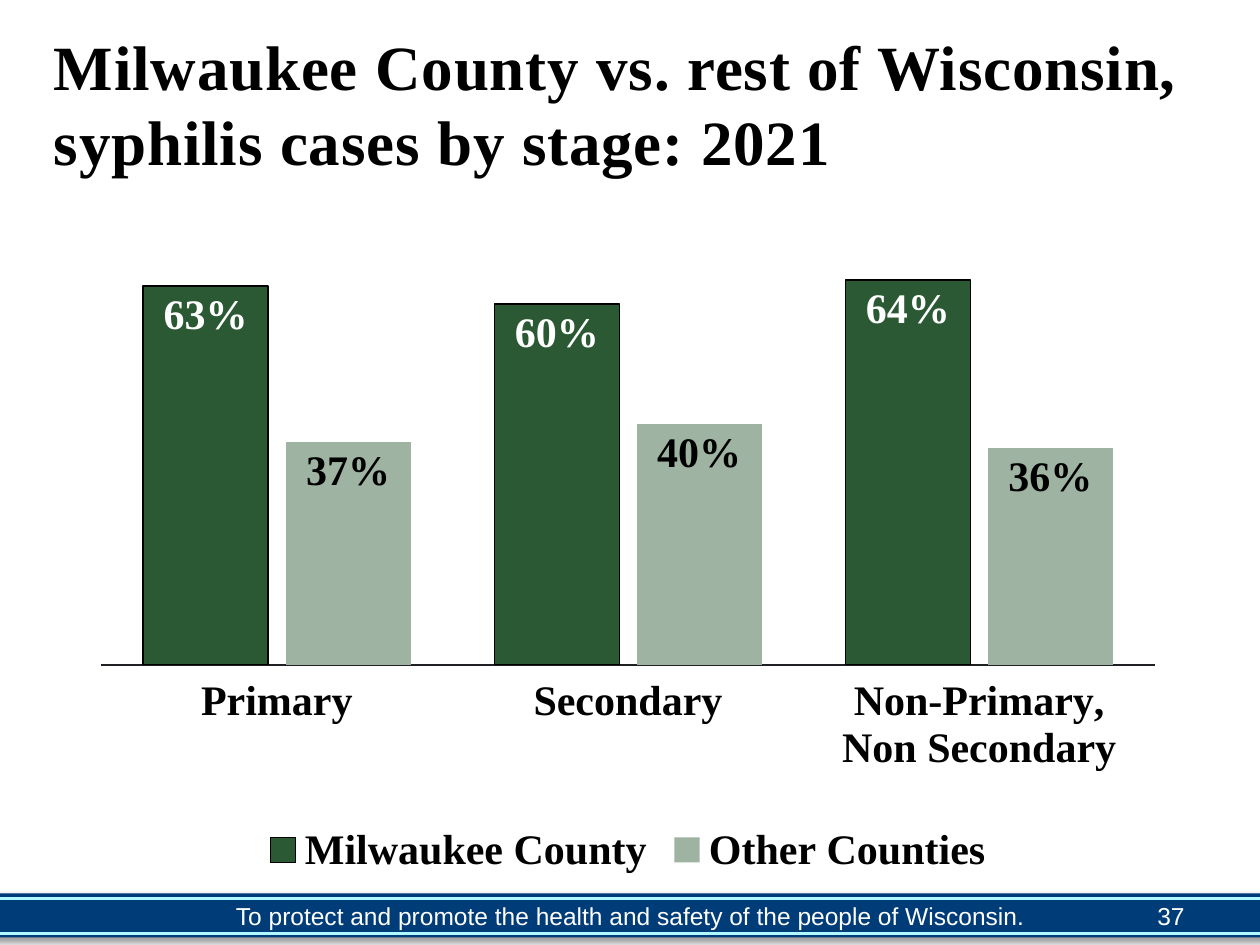
"""Build a slide comparing syphilis cases by stage in Milwaukee County and the rest of Wisconsin."""
from dataclasses import dataclass

from lxml import etree
from pptx import Presentation
from pptx.chart.data import CategoryChartData
from pptx.dml.color import RGBColor
from pptx.enum.chart import XL_CHART_TYPE, XL_LABEL_POSITION, XL_LEGEND_POSITION, XL_TICK_LABEL_POSITION, XL_TICK_MARK
from pptx.enum.shapes import MSO_CONNECTOR, MSO_SHAPE
from pptx.enum.text import MSO_ANCHOR, PP_ALIGN
from pptx.oxml import parse_xml
from pptx.oxml.ns import nsdecls, qn
from pptx.util import Inches, Pt

COLUMNS = XL_CHART_TYPE.COLUMN_CLUSTERED
INSIDE_END = XL_LABEL_POSITION.INSIDE_END
LEGEND_BOTTOM = XL_LEGEND_POSITION.BOTTOM
LABELS_LOW = XL_TICK_LABEL_POSITION.LOW
NO_TICKS = XL_TICK_MARK.NONE
STRAIGHT = MSO_CONNECTOR.STRAIGHT
RECTANGLE = MSO_SHAPE.RECTANGLE
MIDDLE = MSO_ANCHOR.MIDDLE
LEFT, CENTER, RIGHT = PP_ALIGN.LEFT, PP_ALIGN.CENTER, PP_ALIGN.RIGHT


@dataclass
class Theme:
    serif: str = "Times New Roman"
    sans: str = "Arial"
    navy: str = "003D78"
    aqua: str = "B0FAFF"
    green: str = "2A5934"
    sage: str = "9EB3A2"
    axis: str = "1F2023"
    black: str = "000000"
    white: str = "FFFFFF"
    title_size: int = 36
    chart_size: int = 24
    footer_size: int = 14


theme = Theme()


def style_font(font, name, size, color, bold=False):
    font.name = name
    font.size = Pt(size)
    font.bold = bold
    font.color.rgb = RGBColor.from_string(color)


def add_text(slide, box, text, alignment, *font_style):
    shape = slide.shapes.add_textbox(*map(Inches, box))
    frame = shape.text_frame
    frame.word_wrap = True
    frame.vertical_anchor = MIDDLE
    frame.text = text
    paragraph = frame.paragraphs[0]
    paragraph.alignment = alignment
    for run in paragraph.runs:
        style_font(run.font, *font_style)
    return paragraph


presentation = Presentation()
presentation.slide_width = Inches(10)
presentation.slide_height = Inches(7.5)
slide = presentation.slides.add_slide(presentation.slide_layouts[6])

band = slide.shapes.add_shape(RECTANGLE, Inches(-0.1), Inches(7.09), Inches(10.2), Inches(0.35))
band.fill.solid()
band.fill.fore_color.rgb = RGBColor.from_string(theme.navy)
band.line.fill.background()
band.element.spPr.append(parse_xml(
    f'<a:effectLst {nsdecls("a")}><a:outerShdw blurRad="{Pt(4)}" dist="{Pt(3)}" dir="2700000">'
    f'<a:srgbClr val="{theme.black}"><a:alpha val="40000"/></a:srgbClr></a:outerShdw></a:effectLst>'))

footer_style = (theme.sans, theme.footer_size, theme.white)
add_text(slide, (-0.08, 7.17, 10.17, 0.2),
         "To protect and promote the health and safety of the people of Wisconsin.", CENTER, *footer_style)

for top in (7.13, 7.41):
    stripe = slide.shapes.add_connector(STRAIGHT, Inches(-0.1), Inches(top), Inches(10.1), Inches(top))
    stripe.line.color.rgb = RGBColor.from_string(theme.aqua)
    stripe.line.width = Pt(1.5)
    etree.SubElement(stripe.element.spPr, qn("a:effectLst"))

title = add_text(slide, (0.33, 0.25, 9.51, 1.13),
                 "Milwaukee County vs. rest of Wisconsin,\vsyphilis cases by stage: 2021",
                 LEFT, theme.serif, theme.title_size, theme.black, True)
for run in title.runs:
    run._r.get_or_add_rPr().set("spc", "50")

add_text(slide, (7.17, 7.07, 2.33, 0.4), "37", RIGHT, *footer_style)

chart_data = CategoryChartData(number_format="0%")
chart_data.categories = ["Primary", "Secondary", "Non-Primary, Non Secondary"]
chart_data.add_series("Milwaukee County", (0.63, 0.60, 0.64))
chart_data.add_series("Other Counties", (0.37, 0.40, 0.36))
chart = slide.shapes.add_chart(
    COLUMNS, Inches(0.63), Inches(1.78), Inches(8.71), Inches(5.22), chart_data).chart
chart_style = (theme.serif, theme.chart_size, theme.black, True)
style_font(chart.font, *chart_style)
chart.has_title = False
chart.has_legend = True
chart.legend.position = LEGEND_BOTTOM
chart.legend.include_in_layout = False
style_font(chart.legend.font, *chart_style)

category_axis = chart.category_axis
category_axis.major_tick_mark = NO_TICKS
category_axis.tick_label_position = LABELS_LOW
category_axis.format.line.color.rgb = RGBColor.from_string(theme.axis)
category_axis.format.line.width = Pt(1)
style_font(category_axis.tick_labels.font, *chart_style)

value_axis = chart.value_axis
value_axis.minimum_scale = 0
value_axis.maximum_scale = 0.7
value_axis.major_gridlines.format.line.color.rgb = RGBColor.from_string(theme.white)
value_axis.major_gridlines.format.line.width = Pt(0.75)
value_axis.visible = False

plot = chart.plots[0]
plot.gap_width = 67
plot.overlap = -14
plot.vary_by_categories = False
for series, color, label_color in zip(plot.series, (theme.green, theme.sage), (theme.white, theme.black)):
    series.format.fill.solid()
    series.format.fill.fore_color.rgb = RGBColor.from_string(color)
    labels = series.data_labels
    labels.show_value = True
    labels.position = INSIDE_END
    labels.number_format = "0%"
    labels.number_format_is_linked = False
    style_font(labels.font, theme.serif, theme.chart_size, label_color, True)
outline = plot.series[0].format.line
outline.color.rgb = RGBColor.from_string(theme.black)
outline.width = Pt(0.75)

plot_area = chart.element.find(f".//{qn('c:plotArea')}")
for old_layout in plot_area.findall(qn("c:layout")):
    plot_area.remove(old_layout)
layout = etree.Element(qn("c:layout"))
manual = etree.SubElement(layout, qn("c:manualLayout"))
settings = {"layoutTarget": "inner", "xMode": "edge", "yMode": "edge",
            "x": "0.02", "y": "0.03", "w": "0.96", "h": "0.64"}
for name, value in settings.items():
    etree.SubElement(manual, qn(f"c:{name}")).set("val", value)
plot_area.insert(0, layout)

presentation.save("out.pptx")
